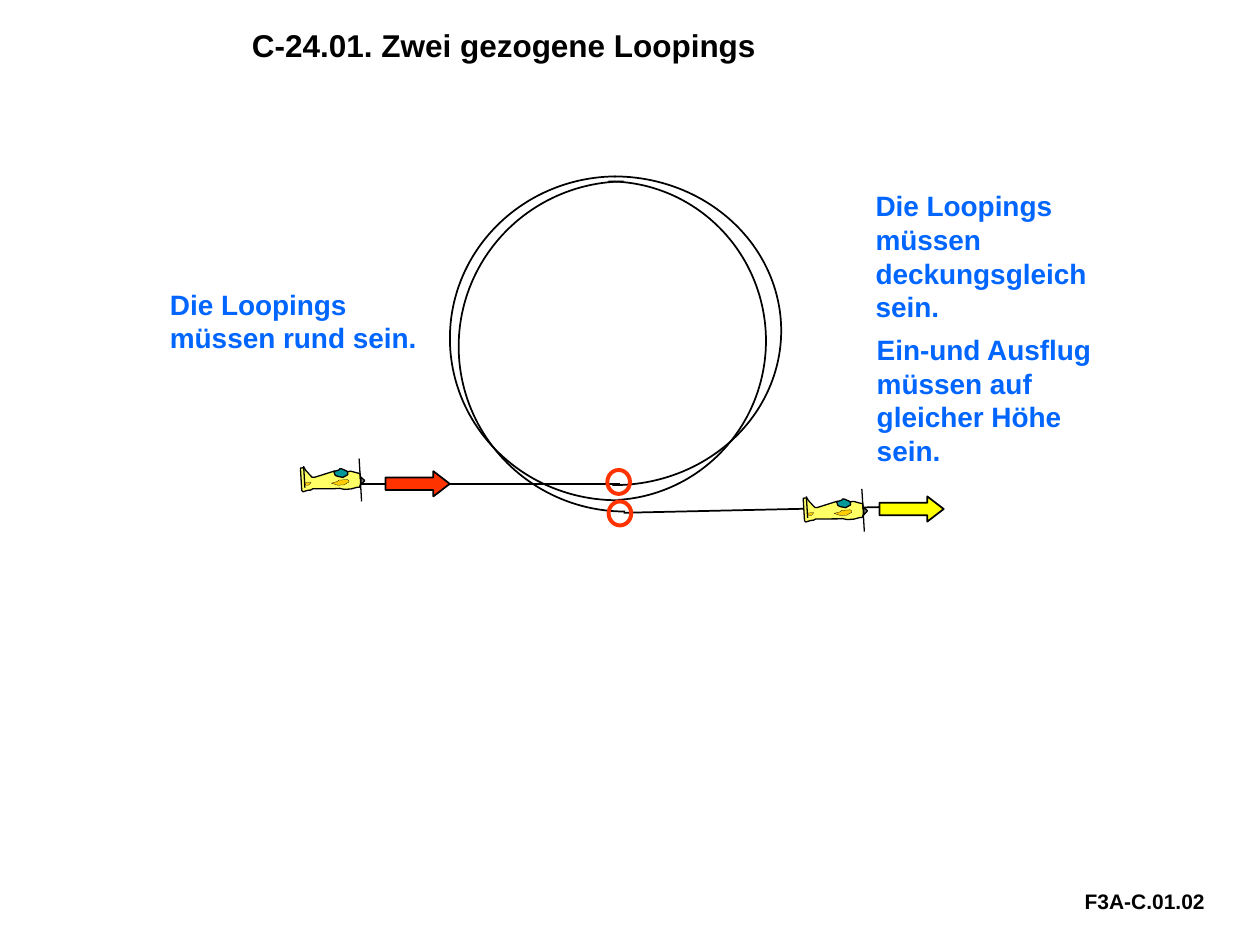
from pptx import Presentation
from pptx.dml.color import RGBColor
from pptx.enum import shapes, text
from pptx.oxml import parse_xml
from pptx.oxml.ns import nsdecls
from pptx.util import Inches, Pt

BLACK = RGBColor(0x00, 0x00, 0x00)
BLUE = RGBColor(0x00, 0x66, 0xFF)
RED = RGBColor(0xFF, 0x33, 0x00)
YELLOW = RGBColor(0xFF, 0xFF, 0x00)
PALE_YELLOW = RGBColor(0xFF, 0xFF, 0x66)
TEAL = RGBColor(0x00, 0x99, 0x99)
GOLD = RGBColor(0xFF, 0xCC, 0x00)
GRAY = RGBColor(0x80, 0x80, 0x80)

FUSELAGE = [
    (37, 6), (40, 6), (43, 7), (46, 8), (47, 8), (47, 16), (46, 19), (44, 19),
    (39, 20), (34, 20), (30, 19), (26, 19), (9, 18), (7, 19), (5, 19), (1, 20),
    (0, 19), (0, 1), (2, 1), (3, 1), (4, 3), (8, 8), (9, 9), (11, 9), (27, 5),
    (28, 8), (33, 9), (35, 9), (36, 7),
]
CANOPY = [(26, 5), (27, 8), (29, 9), (33, 10), (37, 8), (37, 6), (36, 5),
          (34, 4), (32, 3), (31, 3), (30, 4)]
WING = [(24, 14), (29, 13), (30, 12), (37, 12), (38, 13), (38, 14), (36, 15),
        (34, 16), (29, 16)]
TAILPLANE = [(3, 16), (7, 16), (8, 16), (8, 15), (7, 14), (5, 14), (4, 15)]

AIRFRAME = [
    (FUSELAGE, 356.6, PALE_YELLOW, 0.75),
    (CANOPY, 356.6, TEAL, 0.75),
    (WING, 356, GOLD, 0.13),
    (TAILPLANE, 176.4, GOLD, 0.13),
]


def add_text(slide, box, content, size=16, color=BLUE, inset=(0.1, 0.05)):
    shape = slide.shapes.add_textbox(*map(Inches, box))
    frame = shape.text_frame
    frame.word_wrap = True
    frame.auto_size = text.MSO_AUTO_SIZE.SHAPE_TO_FIT_TEXT
    frame.margin_left = frame.margin_right = Inches(inset[0])
    frame.margin_top = frame.margin_bottom = Inches(inset[1])
    paragraph = frame.paragraphs[0]
    paragraph.text = content
    font = paragraph.runs[0].font
    font.name = "Arial"
    font.size = Pt(size)
    font.bold = True
    font.color.rgb = color


def style_shape(shape, fill=None, line=BLACK, width=1, rotation=0):
    shape.shadow.inherit = False
    shape.rotation = rotation
    if fill is None:
        shape.fill.background()
    else:
        shape.fill.solid()
        shape.fill.fore_color.rgb = fill
    shape.line.color.rgb = line
    shape.line.width = Pt(width)


def add_preset(parent, kind, box, adjustments=(), **style):
    shape = parent.shapes.add_shape(kind, *map(Inches, box))
    for index, value in enumerate(adjustments):
        shape.adjustments[index] = value
    style_shape(shape, **style)


def add_line(parent, start, end, width=1):
    line = parent.shapes.add_connector(
        shapes.MSO_CONNECTOR.STRAIGHT, *map(Inches, (*start, *end)))
    line.line.color.rgb = BLACK
    line.line.width = Pt(width)
    line._element.spPr.append(parse_xml(f"<a:effectLst {nsdecls('a')}/>"))


def add_plane(slide, left, top):
    plane = slide.shapes.add_group_shape()

    def place(x, y):
        return left + x / 100, top + y / 100

    add_line(plane, place(48, 29), place(47, 12), 0.75)
    for points, rotation, fill, width in AIRFRAME:
        builder = plane.shapes.build_freeform(*points[0], scale=Inches(0.01))
        builder.add_line_segments(points[1:], close=True)
        part = builder.convert_to_shape(Inches(left), Inches(top))
        style_shape(part, fill=fill, width=width, rotation=rotation)
    add_line(plane, place(3, 18), place(2, 1), 0.75)
    add_preset(plane, shapes.MSO_SHAPE.ISOSCELES_TRIANGLE,
               (*place(46, 11), 0.06, 0.03),
               fill=GRAY, width=0.75, rotation=86.8)
    add_line(plane, place(47, 11), place(46, -5), 0.75)


def add_loops(slide):
    arcs = [
        ((3.55, 1.4, 2.65, 2.45), 54.42, 0),
        ((3.57, 1.4, 2.65, 2.57), 53.73, 180),
        ((3.58, 1.44, 2.5, 2.53), 52.07, 0),
        ((3.64, 1.44, 2.64, 2.62), 53.73, 180),
    ]
    for box, end_angle, rotation in arcs:
        add_preset(slide, shapes.MSO_SHAPE.ARC, box, (162, end_angle),
                   rotation=rotation)


def add_flight_leg(slide, start, end, plane, arrow, color):
    add_line(slide, start, end)
    add_preset(slide, shapes.MSO_SHAPE.RIGHT_ARROW, (*arrow, 0.51, 0.2),
               (0.5, 0.65), fill=color)
    add_plane(slide, *plane)


def add_markers(slide):
    for left, top in ((4.83, 3.98), (4.82, 3.73)):
        add_preset(slide, shapes.MSO_SHAPE.OVAL, (left, top, 0.18, 0.19),
                   line=RED, width=2.25)


def add_notes(slide):
    add_text(slide, (1.25, 2.23, 2.21, 0.64), "Die Loopings müssen rund sein.")
    add_text(slide, (6.85, 1.45, 1.98, 1.18),
             "Die Loopings müssen deckungsgleich sein.")
    add_text(slide, (6.86, 2.59, 1.98, 1.18),
             "Ein-und Ausflug müssen auf gleicher Höhe sein.")


def main():
    presentation = Presentation()
    presentation.slide_width = Inches(10)
    presentation.slide_height = Inches(7.5)
    slide = presentation.slides.add_slide(presentation.slide_layouts[6])
    add_text(slide, (1.91, 0.17, 6.54, 0.42), "C-24.01. Zwei gezogene Loopings",
             size=18, color=BLACK, inset=(0.09, 0.04))
    add_text(slide, (8.51, 7, 1.32, 0.3), "F3A-C.01.02", size=12, color=BLACK)
    add_flight_leg(slide, (4.95, 4.07), (7.2, 4.02), plane=(6.38, 3.93),
                   arrow=(6.98, 3.94), color=YELLOW)
    add_flight_leg(slide, (2.67, 3.84), (4.92, 3.84), plane=(2.39, 3.69),
                   arrow=(3.06, 3.74), color=RED)
    add_loops(slide)
    add_notes(slide)
    add_markers(slide)
    presentation.save("out.pptx")


if __name__ == "__main__":
    main()
